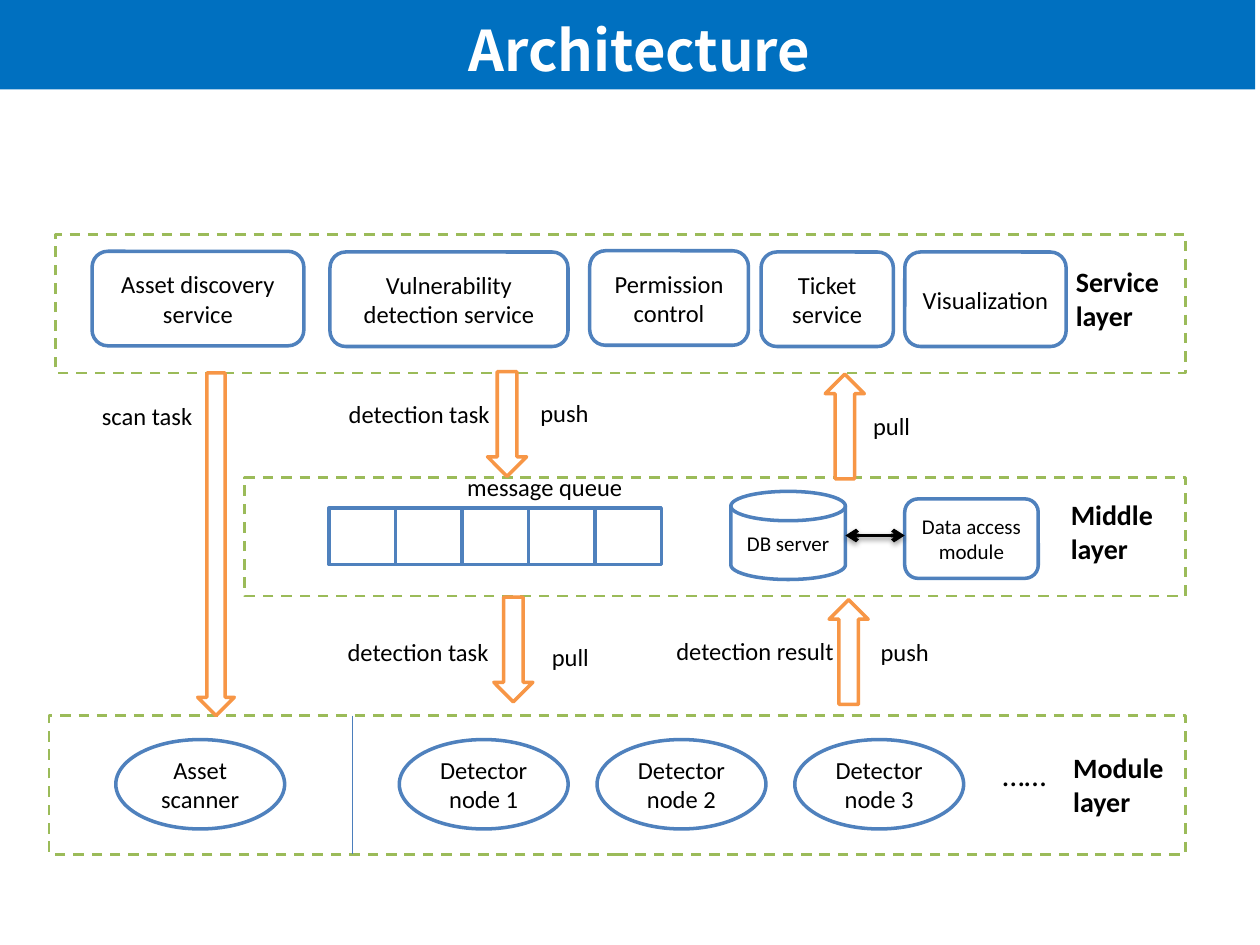
"""Build the layered architecture slide."""
import dataclasses
import typing

import lxml.etree
import pptx
import pptx.dml.color
import pptx.enum.dml
import pptx.enum.shapes
import pptx.enum.text
import pptx.oxml.ns
import pptx.util

Pt = pptx.util.Pt
MSO = pptx.enum.shapes.MSO_SHAPE
ALIGN = pptx.enum.text.PP_ALIGN
ANCHOR = pptx.enum.text.MSO_ANCHOR
AUTO = pptx.enum.text.MSO_AUTO_SIZE
DASH = pptx.enum.dml.MSO_LINE.DASH
COLORS = {
    "white": "FFFFFF",
    "black": "000000",
    "banner": "0070C0",
    "layer": "9BBB59",
    "node": "4F81BD",
    "divider": "4B7EBC",
    "flow": "F79646",
}


@dataclasses.dataclass(frozen=True)
class Box:
    x: float
    y: float
    w: float
    h: float

    def emu(self) -> tuple[int, ...]:
        return tuple(Pt(v) for v in (self.x, self.y, self.w, self.h))


@dataclasses.dataclass(frozen=True)
class Node:
    preset: typing.Any
    box: Box
    text: str = ""
    size: float = 14


@dataclasses.dataclass(frozen=True)
class Arrow:
    box: Box
    up: bool = False


@dataclasses.dataclass(frozen=True)
class Label:
    text: str
    x: float
    y: float
    w: float = 111.6
    h: float = 24.5
    size: float = 14
    bold: bool = False


def rgb(name: str) -> pptx.dml.color.RGBColor:
    return pptx.dml.color.RGBColor.from_string(COLORS[name])


def write(tf, text: str, *, size: float = 14, bold: bool = False, color: str = "black",
          font: str = "Calibri", align=ALIGN.LEFT, anchor=ANCHOR.TOP, auto=AUTO.NONE) -> None:
    tf.word_wrap = True
    tf.auto_size = auto
    tf.vertical_anchor = anchor
    for i, line in enumerate(text.split("\n")):
        p = tf.add_paragraph() if i else tf.paragraphs[0]
        p.alignment = align
        r = p.add_run()
        r.text = line
        r.font.name = font
        r.font.size = Pt(size)
        r.font.bold = bold
        r.font.color.rgb = rgb(color)


def draw_outline(slide, preset, box: Box, color: str, width: float = 2):
    sp = slide.shapes.add_shape(preset, *box.emu())
    sp.shadow.inherit = False
    sp.fill.solid()
    sp.fill.fore_color.rgb = rgb("white")
    sp.line.color.rgb = rgb(color)
    sp.line.width = Pt(width)
    return sp


def draw_layer(slide, box: Box) -> None:
    draw_outline(slide, MSO.RECTANGLE, box, "layer", 1.5).line.dash_style = DASH


def draw_node(slide, node: Node) -> None:
    sp = draw_outline(slide, node.preset, node.box, "node")
    if node.text:
        write(sp.text_frame, node.text, size=node.size, align=ALIGN.CENTER, anchor=ANCHOR.MIDDLE)


def draw_arrow(slide, arrow: Arrow) -> None:
    sp = draw_outline(slide, MSO.DOWN_ARROW, arrow.box, "flow")
    sp.rotation = 180 if arrow.up else 0


def draw_label(slide, label: Label) -> None:
    sp = slide.shapes.add_textbox(*Box(label.x, label.y, label.w, label.h).emu())
    write(sp.text_frame, label.text, size=label.size, bold=label.bold, auto=AUTO.SHAPE_TO_FIT_TEXT)


def draw_line(slide, start: tuple[float, float], end: tuple[float, float],
              color: str, width: float, two_way: bool = False) -> None:
    sp = slide.shapes.add_connector(pptx.enum.shapes.MSO_CONNECTOR.STRAIGHT,
                                    *(Pt(v) for v in (*start, *end)))
    sp.line.color.rgb = rgb(color)
    sp.line.width = Pt(width)
    qn = pptx.oxml.ns.qn
    effects = lxml.etree.SubElement(sp._element.spPr, qn("a:effectLst"))
    if two_way:
        ln = sp.line._get_or_add_ln()
        for tag in ("a:headEnd", "a:tailEnd"):
            lxml.etree.SubElement(ln, qn(tag), type="arrow")
        shadow = lxml.etree.SubElement(effects, qn("a:outerShdw"), blurRad=str(Pt(3.1)),
                                       dist=str(Pt(1.6)), dir="5400000", rotWithShape="0")
        tint = lxml.etree.SubElement(shadow, qn("a:srgbClr"), val=COLORS["black"])
        lxml.etree.SubElement(tint, qn("a:alpha"), val="38000")


def draw_title(slide, text: str) -> None:
    sp = slide.shapes.title
    sp.left, sp.top, sp.width, sp.height = Box(-1.4, 0, 718.6, 51.1).emu()
    sp.fill.solid()
    sp.fill.fore_color.rgb = rgb("banner")
    tf = sp.text_frame
    tf.margin_left = Pt(22.3)
    write(tf, text, size=32, bold=True, color="white", font="Noto Sans CJK SC",
          align=ALIGN.CENTER, anchor=ANCHOR.BOTTOM)


LAYERS = [
    Box(31.7, 133.9, 645.8, 79.2),
    Box(139.7, 272.9, 537.8, 67.7),
    Box(28.1, 409, 649.4, 79.2),
]
SERVICES = [
    Node(MSO.ROUNDED_RECTANGLE, Box(x, y, w, 54), text)
    for text, x, y, w in (
        ("Asset discovery service", 52.6, 143.6, 121),
        ("Vulnerability detection service", 188.6, 144, 136),
        ("Permission control", 337, 143.3, 90.7),
        ("Ticket\nservice", 434.9, 144, 75.6),
        ("Visualization", 517, 144, 92.2),
    )
]
STORES = [
    Node(MSO.FLOWCHART_MAGNETIC_DISK, Box(417.6, 280.8, 65.5, 50.4), "DB server", 12),
    Node(MSO.ROUNDED_RECTANGLE, Box(517, 285.1, 76.3, 45.4), "Data access module", 12),
]
QUEUE = [Node(MSO.RECTANGLE, Box(187.9 + 38 * i, 290.2, 38, 32.4)) for i in range(5)]
MODULES = [Node(MSO.OVAL, Box(66.2, 422.6, 96.5, 51.1), "Asset\nscanner")] + [
    Node(MSO.OVAL, Box(228.2 + 113 * i, 422.6, 96.5, 51.1), f"Detector node {i + 1}")
    for i in range(3)
]
ARROWS = [
    Arrow(Box(113, 213.1, 20.9, 195.8)),
    Arrow(Box(278.6, 212.4, 22.3, 59.8)),
    Arrow(Box(282.2, 341.3, 22.3, 59.8)),
    Arrow(Box(471.6, 213.8, 22.3, 59.8), up=True),
    Arrow(Box(473.8, 342.7, 22.3, 59.8), up=True),
]
LABELS = [
    Label("message queue", 259.9, 266.4, 103.7),
    Label("scan task", 51.1, 225.4),
    Label("detection task", 192.2, 224.6),
    Label("push", 301.7, 223.9, 56.9),
    Label("pull", 491.8, 231.1, 56.9),
    Label("detection task", 191.5, 360.7),
    Label("pull", 308.2, 363.6, 56.9),
    Label("detection result", 379.4, 360),
    Label("push", 496.1, 360.7, 56.9),
    Label("……", 565.9, 427.7, 77, 28.8, 18),
    Label("Service layer", 607.7, 147.6, 95, 46.1, 16, True),
    Label("Middle layer", 604.8, 280.8, 95, 46.1, 16, True),
    Label("Module layer", 606.2, 425.5, 95, 46.1, 16, True),
]


def main() -> None:
    prs = pptx.Presentation()
    prs.slide_width, prs.slide_height = Pt(720), Pt(540)
    slide = prs.slides.add_slide(prs.slide_layouts[5])
    draw_title(slide, "Architecture")
    for layer in LAYERS:
        draw_layer(slide, layer)
    for node in SERVICES + STORES + QUEUE + MODULES:
        draw_node(slide, node)
    draw_line(slide, (483.1, 306), (517, 306), "black", 2.25, two_way=True)
    draw_line(slide, (201.6, 409), (201.6, 488.2), "divider", 0.75)
    for arrow in ARROWS:
        draw_arrow(slide, arrow)
    for label in LABELS:
        draw_label(slide, label)
    prs.save("out.pptx")


if __name__ == "__main__":
    main()
